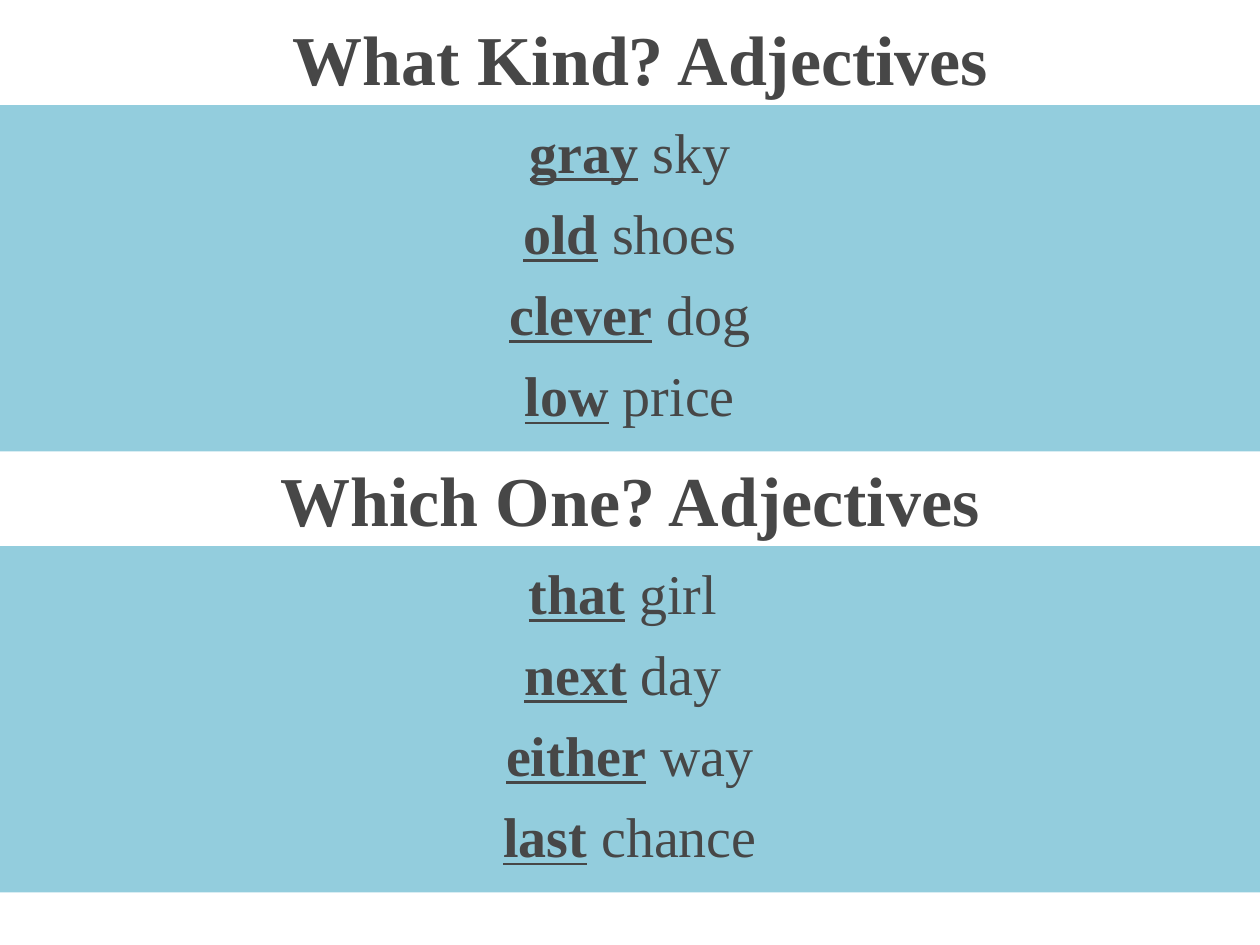
import lxml.etree
import pptx
import pptx.dml.color
import pptx.enum.text
import pptx.oxml.ns
import pptx.util

Pt = pptx.util.Pt
INK = pptx.dml.color.RGBColor(0x47, 0x47, 0x47)
BAND = pptx.dml.color.RGBColor(0x93, 0xCD, 0xDD)
TITLE = {"name": "Times New Roman", "size": Pt(40), "bold": True}
WORD = {"name": "Times New Roman", "size": Pt(32)}
ADJECTIVE = {**WORD, "bold": True, "underline": True}
NOUN = {**WORD, "bold": False, "underline": False}
KINDS = [("gray", " sky"), ("old", " shoes"), ("clever", " dog"), ("low", " price")]
WHICH = [("that", " girl "), ("next", " day "), ("either", " way"), ("last", " chance")]


def set_attrs(obj, values):
    """Set each attribute named in values."""
    for name, value in values.items():
        setattr(obj, name, value)


def place(sp, left, top, width, height, **frame):
    """Move a shape and format its text frame."""
    set_attrs(sp, {"left": Pt(left), "top": Pt(top), "width": Pt(width), "height": Pt(height)})
    set_attrs(sp.text_frame, {"word_wrap": True,
                              "auto_size": pptx.enum.text.MSO_AUTO_SIZE.NONE, **frame})


def add_run(p, text, font):
    """Append a formatted run to a paragraph."""
    r = p.add_run()
    r.text = text
    set_attrs(r.font, font)
    r.font.color.rgb = INK


def fill_title(sp, left, top, text):
    """Write a bold section title."""
    place(sp, left, top, 684, 54, vertical_anchor=pptx.enum.text.MSO_ANCHOR.MIDDLE)
    p = sp.text_frame.paragraphs[0]
    p.alignment = pptx.enum.text.PP_ALIGN.CENTER
    add_run(p, text, TITLE)


def fill_band(sp, top, phrases):
    """Write centred phrases on a full-width coloured band."""
    place(sp, 0, top, 720, 198, margin_top=Pt(7),
          vertical_anchor=pptx.enum.text.MSO_ANCHOR.TOP)
    sp.fill.solid()
    sp.fill.fore_color.rgb = BAND
    tf = sp.text_frame
    for i, (adjective, noun) in enumerate(phrases):
        p = tf.add_paragraph() if i else tf.paragraphs[0]
        set_attrs(p, {"alignment": pptx.enum.text.PP_ALIGN.CENTER,
                      "space_before": Pt(8 if i else 0)})
        pPr = p._p.get_or_add_pPr()
        pPr.set("marL", "0")
        pPr.set("indent", "0")
        lxml.etree.SubElement(pPr, pptx.oxml.ns.qn("a:buNone"))
        add_run(p, adjective, ADJECTIVE)
        add_run(p, noun, NOUN)


def main():
    """Build the adjectives slide."""
    prs = pptx.Presentation()
    set_attrs(prs, {"slide_width": Pt(720), "slide_height": Pt(540)})
    s = prs.slides.add_slide(prs.slide_layouts[1])
    fill_title(s.shapes.title, 24, 6, "What Kind? Adjectives")
    fill_band(s.placeholders[1], 60, KINDS)
    fill_title(s.shapes.add_textbox(0, 0, 0, 0), 18, 258, "Which One? Adjectives")
    fill_band(s.shapes.add_textbox(0, 0, 0, 0), 312, WHICH)
    prs.save("out.pptx")


if __name__ == "__main__":
    main()
